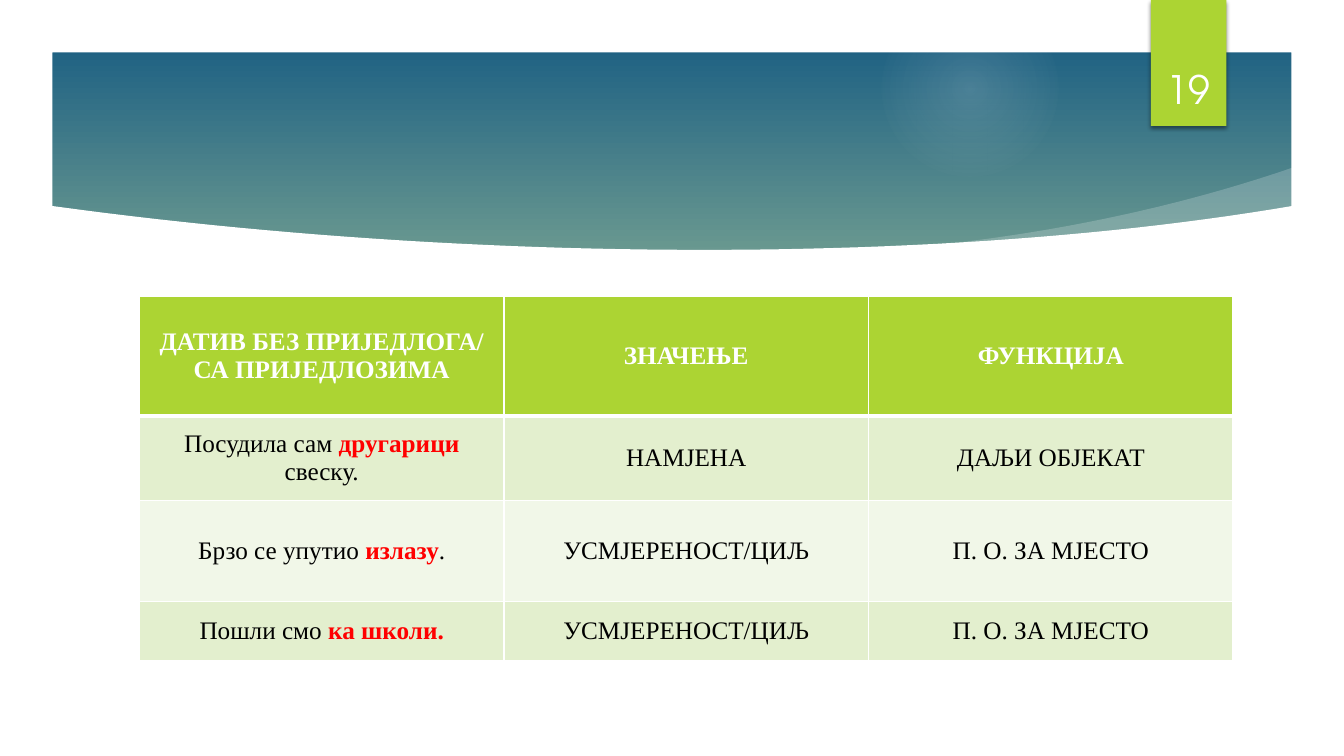
from pptx import Presentation
from pptx.dml.color import RGBColor
from pptx.enum.shapes import MSO_SHAPE
from pptx.enum.text import MSO_ANCHOR, PP_ALIGN
from pptx.oxml import parse_xml
from pptx.oxml.ns import nsdecls
from pptx.util import Inches, Pt

ELLIPSE, FRAME, RECTANGLE = MSO_SHAPE.OVAL, MSO_SHAPE.FRAME, MSO_SHAPE.RECTANGLE
CENTER, MIDDLE, BOTTOM = PP_ALIGN.CENTER, MSO_ANCHOR.MIDDLE, MSO_ANCHOR.BOTTOM

COLORS = {
    "deep": "0E5580", "pale": "DAECA3", "paler": "E6F2C2", "glow": "F7F7F7",
    "white": "FFFFFF", "black": "000000", "red": "FF0000",
    "lime": "ACD433", "band": "E3EFCE", "light band": "F1F7E8",
}
SERIF, SANS = "Times New Roman", "TeX Gyre Adventor"

# The slide is a grid of 160 columns by 90 rows of square cells
COLUMNS, ROWS = 160, 90
UNIT = Inches(1 / 12)

# Cells: a line break starts a paragraph, asterisks enclose the highlighted words
TABLE_ROWS = [
    ("ДАТИВ БЕЗ ПРИЈЕДЛОГА/\nСА ПРИЈЕДЛОЗИМА", "ЗНАЧЕЊЕ", "ФУНКЦИЈА"),
    ("Посудила сам *другарици *свеску.", "НАМЈЕНА", "ДАЉИ ОБЈЕКАТ"),
    ("Брзо се упутио *излазу*.", "УСМЈЕРЕНОСТ/ЦИЉ", "П. О. ЗА МЈЕСТО"),
    ("Пошли смо *ка школи.*", "УСМЈЕРЕНОСТ/ЦИЉ", "П. О. ЗА МЈЕСТО"),
]


def grid(*lengths):
    return [round(length * UNIT) for length in lengths]


def write(paragraph, text, font=SERIF, size=18, color="black", bold=False):
    paragraph.alignment = CENTER
    run = paragraph.add_run()
    run.text = text
    run.font.name, run.font.size, run.font.bold = font, Pt(size), bold
    run.font.color.rgb = RGBColor.from_string(COLORS[color])


def curve(start, control_1, control_2, end, steps=48):
    """Points along a cubic Bezier curve."""
    points = []
    for step in range(steps + 1):
        t = step / steps
        weights = ((1 - t) ** 3, 3 * t * (1 - t) ** 2, 3 * t * t * (1 - t), t ** 3)
        corners = (start, control_1, control_2, end)
        points.append(tuple(sum(weight * corner[axis] for weight, corner in zip(weights, corners))
                            for axis in (0, 1)))
    return points


class SlideBuilder:
    def __init__(self, presentation):
        self.slide = presentation.slides.add_slide(presentation.slide_layouts[6])

    def gradient(self, fill, owner, stops, direction):
        """Stops are (position, color, opacity), all numbers in percent."""
        fill.gradient()
        element = owner.xpath(".//a:gradFill")[0]
        for child in list(element):
            element.remove(child)
        stops_xml = "".join(
            f'<a:gs pos="{position * 1000}"><a:srgbClr val="{COLORS[color]}">'
            f'<a:alpha val="{opacity * 1000}"/></a:srgbClr></a:gs>'
            for position, color, opacity in stops)
        element.append(parse_xml(f'<a:gsLst {nsdecls("a")}>{stops_xml}</a:gsLst>'))
        element.append(parse_xml(direction))

    def background(self, stops):
        self.gradient(self.slide.background.fill, self.slide.element, stops,
                      f'<a:lin {nsdecls("a")} ang="5400000" scaled="0"/>')

    def finish(self, shape, color, opacity=100):
        shape.shadow.inherit = False
        shape.line.fill.background()
        if color:
            shape.fill.solid()
            shape.fill.fore_color.rgb = RGBColor.from_string(COLORS[color])
        if opacity < 100:
            shape.element.xpath("./p:spPr/a:solidFill/a:srgbClr")[0].append(
                parse_xml(f'<a:alpha {nsdecls("a")} val="{opacity * 1000}"/>'))
        return shape

    def shape(self, kind, box, color=None):
        return self.finish(self.slide.shapes.add_shape(kind, *grid(*box)), color)

    def glow(self, box, stops):
        shape = self.shape(ELLIPSE, box)
        self.gradient(shape.fill, shape.element, stops,
                      f'<a:path {nsdecls("a")} path="circle">'
                      '<a:fillToRect l="50000" t="50000" r="50000" b="50000"/></a:path>')

    def outline(self, points, color, opacity=100):
        first, *others = [grid(*point) for point in points]
        builder = self.slide.shapes.build_freeform(*first, scale=1.0)
        builder.add_line_segments(others, close=True)
        return self.finish(builder.convert_to_shape(), color, opacity)

    def drop_shadow(self, shape, blur, distance, opacity):
        shape.element.xpath("./p:spPr/a:effectLst")[0].append(parse_xml(
            f'<a:outerShdw {nsdecls("a")} blurRad="{Pt(blur)}" dist="{Pt(distance)}" '
            f'dir="5400000" rotWithShape="0"><a:srgbClr val="{COLORS["black"]}">'
            f'<a:alpha val="{opacity * 1000}"/></a:srgbClr></a:outerShdw>'))

    def text(self, box, text, **style):
        frame = self.slide.shapes.add_textbox(*grid(*box)).text_frame
        frame.word_wrap, frame.vertical_anchor = True, BOTTOM
        write(frame.paragraphs[0], text, **style)

    def cell(self, cell, text, fill, bottom_width, **style):
        for side in "LRTB":
            width = Pt(bottom_width if side == "B" else 1)
            cell._tc.get_or_add_tcPr().append(parse_xml(
                f'<a:ln{side} {nsdecls("a")} w="{width}"><a:solidFill>'
                f'<a:srgbClr val="{COLORS["white"]}"/></a:solidFill></a:ln{side}>'))
        cell.fill.solid()
        cell.fill.fore_color.rgb = RGBColor.from_string(COLORS[fill])
        cell.vertical_anchor = MIDDLE
        for index, line in enumerate(text.split("\n")):
            frame = cell.text_frame
            paragraph = frame.add_paragraph() if index else frame.paragraphs[0]
            for part, words in enumerate(line.split("*")):
                if words:
                    highlight = {"color": "red", "bold": True} if part % 2 else {}
                    write(paragraph, words, **{**style, **highlight})

    def table(self, left, top, column_width, row_heights, rows):
        count = len(rows[0])
        table = self.slide.shapes.add_table(
            len(rows), count,
            *grid(left, top, column_width * count, sum(row_heights))).table
        for column in table.columns:
            column.width = grid(column_width)[0]
        for index, (height, texts) in enumerate(zip(row_heights, rows)):
            table.rows[index].height = grid(height)[0]
            header = index == 0
            fill = "lime" if header else "band" if index % 2 else "light band"
            style = {"color": "white", "bold": True} if header else {}
            for column, text in enumerate(texts):
                self.cell(table.cell(index, column), text, fill,
                          bottom_width=3 if header else 1, **style)


def main():
    presentation = Presentation()
    presentation.slide_width, presentation.slide_height = grid(COLUMNS, ROWS)
    builder = SlideBuilder(presentation)

    # Backdrop: gradient, soft glow, translucent swoosh
    builder.background([(0, "deep", 100), (74, "pale", 100),
                        (83, "pale", 100), (100, "paler", 100)])
    builder.glow((105, 0, 21, 21), [(0, "glow", 14), (36, "glow", 7),
                                    (73, "glow", 0), (100, "glow", 0)])
    swoosh = curve((111.6, 29.16), (126, 27.6), (140.4, 24.6), (154, 19.92))
    builder.outline(swoosh + [(154.7, 25.7), (112, 30)], "white", opacity=20)

    # White content panel with a curved top, and the slide's frame
    panel_top = curve((6, 24.5), (56.4, 31.44), (112.8, 31.56), (154, 24.5))
    builder.outline(panel_top + [(154, 84), (6, 84)], "white")
    frame = builder.shape(FRAME, (0, 0, COLUMNS, ROWS), "white")
    frame.adjustments[0] = 6.25 / ROWS

    # Slide number tab
    tab = builder.shape(RECTANGLE, (137, 0, 9, 15), "lime")
    builder.drop_shadow(tab, blur=3, distance=2, opacity=45)
    builder.text((136, 3.84, 11, 10.08), "19", font=SANS, size=28, color="white")

    # Dative table
    builder.table(16.6, 35.3, 43.4, (14.25, 10, 12.1, 7), TABLE_ROWS)

    presentation.save("out.pptx")


if __name__ == "__main__":
    main()
